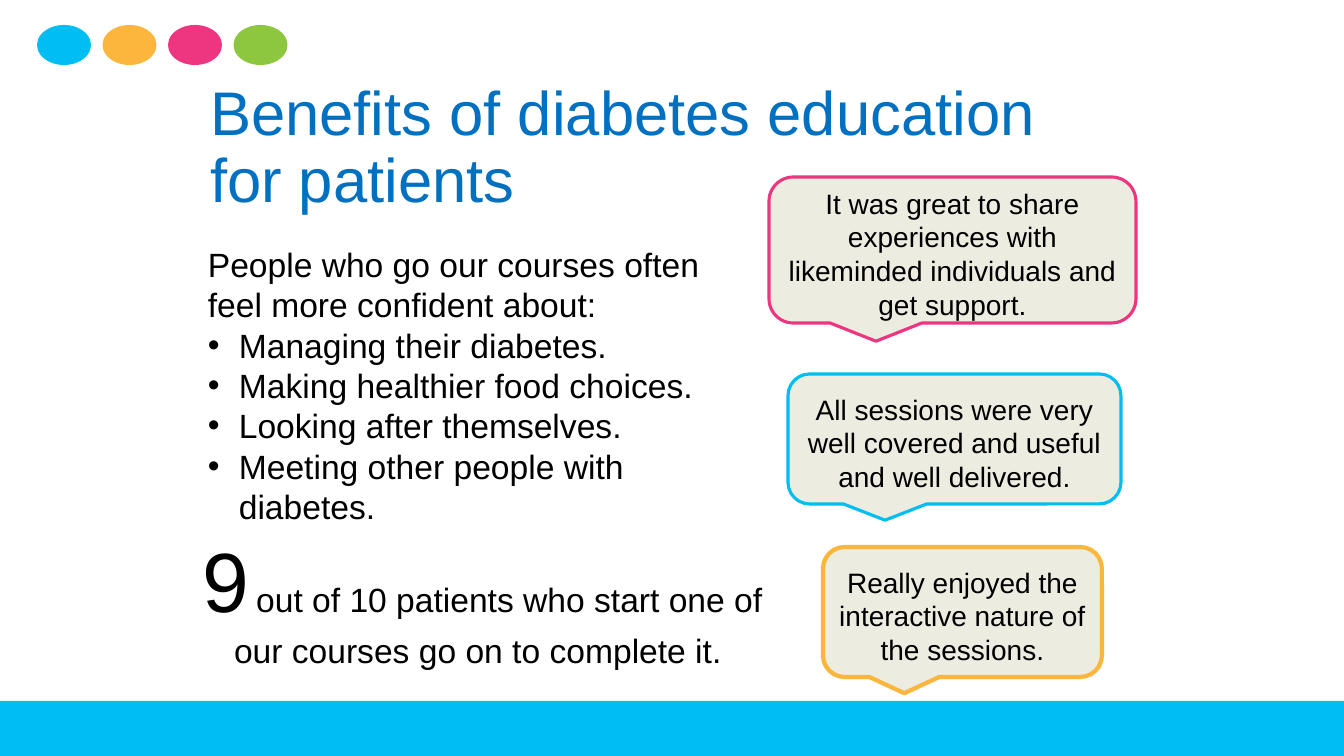
from pptx import Presentation
from pptx.dml.color import RGBColor
from pptx.enum.shapes import MSO_SHAPE as Shape
from pptx.enum.text import MSO_ANCHOR as Anchor, PP_ALIGN as Align
from pptx.oxml.xmlchemy import OxmlElement
from pptx.util import Emu, Pt

EMU_PER_PX = 914400 / 100.8
FONT = "Arial"
COLORS = {
    "cyan": "00BDF2",
    "amber": "FCB53D",
    "pink": "EE3680",
    "green": "8DC63F",
    "title": "0070C0",
    "bubble": "EDECE1",
    "text": "000000",
}
BENEFITS = [
    "Managing their diabetes.",
    "Making healthier food choices.",
    "Looking after themselves.",
    "Meeting other people with diabetes.",
]
QUOTES = [
    ("Really enjoyed the interactive nature of the sessions.",
     (823, 547, 279, 130), "amber", 3),
    ("All sessions were very well covered and useful and well delivered.",
     (788, 374, 333, 130), "cyan", 2.25),
    ("It was great to share experiences with likeminded individuals and get support.",
     (769, 177, 367, 146), "pink", 2.25),
]


def px(length):
    return Emu(round(length * EMU_PER_PX))


def color(name):
    return RGBColor.from_string(COLORS[name])


def add_span(para, text, size, color_name="text"):
    span = para.add_run()
    span.text = text
    span.font.name = FONT
    span.font.size = Pt(size)
    span.font.color.rgb = color(color_name)


def add_filled(page, kind, box, fill):
    shape = page.shapes.add_shape(kind, *map(px, box))
    shape.shadow.inherit = False
    shape.fill.solid()
    shape.fill.fore_color.rgb = color(fill)
    shape.line.fill.background()
    return shape


def add_text_frame(page, box):
    frame = page.shapes.add_textbox(*map(px, box)).text_frame
    frame.word_wrap = True
    return frame


def add_bullet(para):
    properties = para._p.get_or_add_pPr()
    indent = px(31)
    properties.set("marL", str(indent))
    properties.set("indent", str(-indent))
    font = OxmlElement("a:buFont")
    font.set("typeface", FONT)
    bullet = OxmlElement("a:buChar")
    bullet.set("char", "•")
    properties.extend([font, bullet])


def add_decoration(page):
    add_filled(page, Shape.RECTANGLE, (0, 701, 1344, 55), "cyan")
    for index, name in enumerate(["cyan", "amber", "pink", "green"]):
        add_filled(page, Shape.OVAL, (37 + 65.5 * index, 25, 54, 40), name)


def add_title(page, text):
    title = page.shapes.title
    title.left, title.top, title.width, title.height = map(px, (200, 76, 869, 146))
    frame = title.text_frame
    frame.word_wrap = True
    frame.vertical_anchor = Anchor.MIDDLE
    para = frame.paragraphs[0]
    para.alignment = Align.LEFT
    para.line_spacing = 0.9
    add_span(para, text, 44, "title")


def add_quote(page, text, box, outline, weight):
    bubble = add_filled(page, Shape.ROUNDED_RECTANGULAR_CALLOUT, box, "bubble")
    bubble.line.color.rgb = color(outline)
    bubble.line.width = Pt(weight)
    frame = bubble.text_frame
    frame.word_wrap = True
    frame.vertical_anchor = Anchor.MIDDLE
    frame.margin_top, frame.margin_bottom = px(7), 0
    para = frame.paragraphs[0]
    para.alignment = Align.CENTER
    add_span(para, text, 20)


def add_benefits(page):
    frame = add_text_frame(page, (198, 239, 561, 295))
    add_span(frame.paragraphs[0],
             "People who go our courses often feel more confident about:", 24)
    for benefit in BENEFITS:
        para = frame.add_paragraph()
        add_bullet(para)
        add_span(para, benefit, 24)


def add_completion(page):
    frame = add_text_frame(page, (177, 524, 611, 152))
    para = frame.paragraphs[0]
    para.alignment = Align.CENTER
    add_span(para, "9", 60)
    add_span(para, " ", 18)
    add_span(para, "out of 10 patients who start one of our courses go on to complete it. ", 24)


def main():
    deck = Presentation()
    deck.slide_width, deck.slide_height = px(1344), px(756)
    page = deck.slides.add_slide(deck.slide_layouts[5])
    add_decoration(page)
    add_title(page, "Benefits of diabetes education for patients")
    for quote in QUOTES:
        add_quote(page, *quote)
    add_benefits(page)
    add_completion(page)
    deck.save("out.pptx")


if __name__ == "__main__":
    main()
